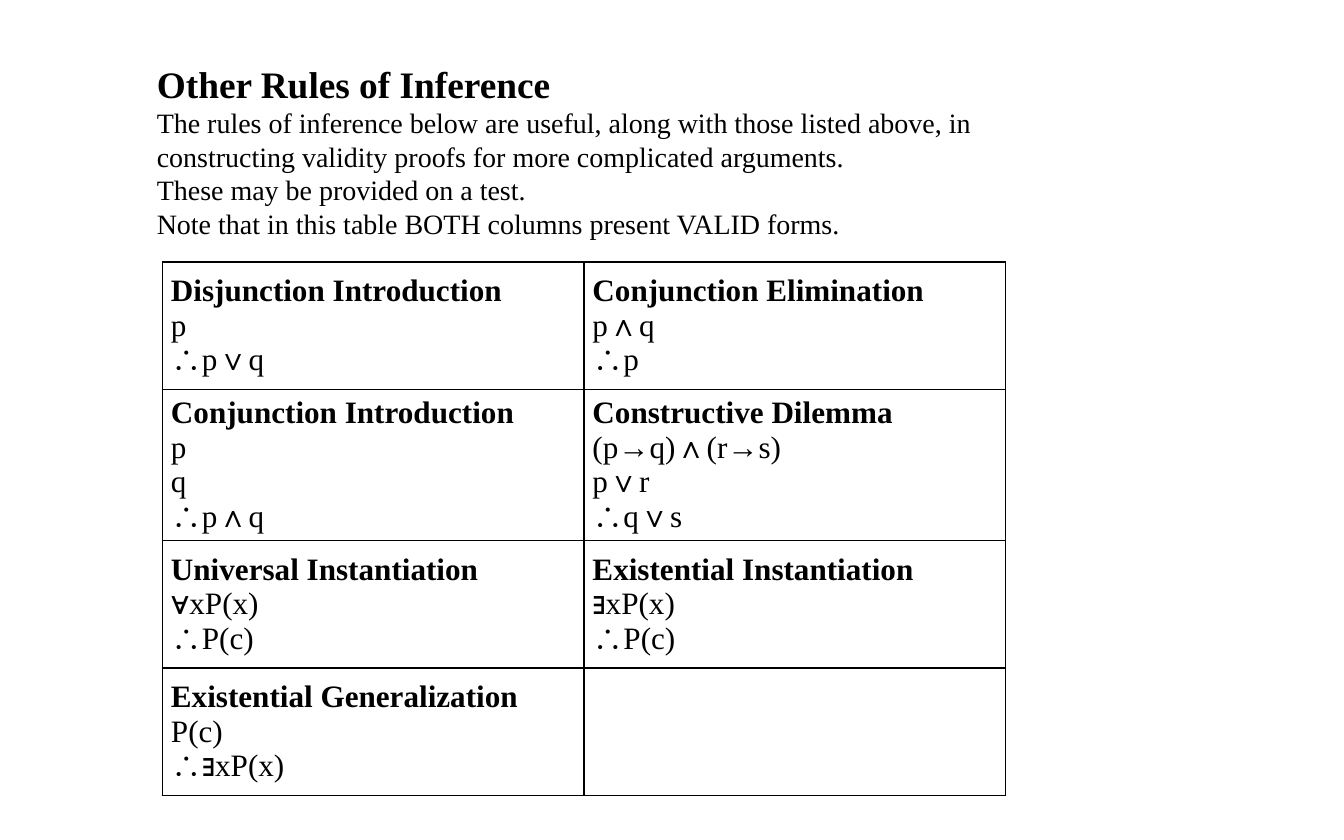
"""Build a slide listing further valid rules of inference."""
from lxml.etree import SubElement
from pptx import Presentation
from pptx.dml.color import RGBColor
from pptx.enum.text import MSO_ANCHOR as Anchor, MSO_AUTO_SIZE as AutoSize, PP_ALIGN as Align
from pptx.oxml.ns import qn
from pptx.util import Pt

BLACK = RGBColor(0, 0, 0)
WHITE = RGBColor(255, 255, 255)

INTRO = [
    "The rules of inference below are useful, along with those listed above, in "
    "constructing validity proofs for more complicated arguments.",
    "These may be provided on a test.",
    "Note that in this table BOTH columns present VALID forms.",
]
RULES = [
    [("Disjunction Introduction", "p", "∴p∨q"),
     ("Conjunction Elimination", "p∧q", "∴p")],
    [("Conjunction Introduction", "p", "q", "∴p∧q"),
     ("Constructive Dilemma", "(p→q)∧(r→s)", "p∨r", "∴q∨s")],
    [("Universal Instantiation", "∀xP(x)", "∴P(c)"),
     ("Existential Instantiation", "∃xP(x)", "∴P(c)")],
    [("Existential Generalization", "P(c)", "∴∃xP(x)"),
     ()],
]
ROW_HEIGHTS = [82, 97, 82, 82]


def apply(target, values):
    """Set each named attribute of the target."""
    for name, value in values.items():
        setattr(target, name, value)


class SlideWriter:
    """Hold the text style and the current slide."""

    font_name = "Times New Roman"

    def __init__(self, deck):
        """Start a title-only slide."""
        self.page = deck.slides.add_slide(deck.slide_layouts[5])

    def lines(self, para, texts, size, bold_lines=0):
        """Write lines split by breaks, the leading ones in bold."""
        para.alignment = Align.LEFT
        for index, text in enumerate(texts):
            if index:
                para.add_line_break()
            span = para.add_run()
            span.text = text
            apply(span.font, {"name": self.font_name, "size": Pt(size),
                              "bold": index < bold_lines})
            span.font.color.rgb = BLACK
        for line_break in para._p.findall(qn("a:br")):
            SubElement(line_break, qn("a:rPr"), sz=str(size * 100))

    def title(self, heading, intro, left, top, width, height):
        """Place the heading and its introduction in the title placeholder."""
        box = self.page.shapes.title
        apply(box, {"left": Pt(left), "top": Pt(top),
                    "width": Pt(width), "height": Pt(height)})
        frame = box.text_frame
        apply(frame, {"word_wrap": True, "auto_size": AutoSize.NONE,
                      "vertical_anchor": Anchor.TOP})
        self.lines(frame.paragraphs[0], [heading], 24, bold_lines=1)
        self.lines(frame.add_paragraph(), intro, 18)

    def border(self, cell):
        """Draw a thin black line on all four sides of a cell."""
        properties = cell._tc.get_or_add_tcPr()
        for position, side in enumerate(("lnL", "lnR", "lnT", "lnB")):
            line = SubElement(properties, qn(f"a:{side}"), w=str(Pt(1)))
            fill = SubElement(line, qn("a:solidFill"))
            SubElement(fill, qn("a:srgbClr"), val=str(BLACK))
            properties.insert(position, line)

    def table(self, rows, heights, left, top, width):
        """Place a ruled table whose cells open with a bold line."""
        columns = len(rows[0])
        table = self.page.shapes.add_table(
            len(rows), columns, Pt(left), Pt(top), Pt(width), Pt(sum(heights))).table
        apply(table, {"first_row": False, "horz_banding": False})
        for row, height in zip(table.rows, heights):
            row.height = Pt(height)
        for cell, texts in zip(table.iter_cells(), sum(rows, [])):
            apply(cell, {"margin_left": Pt(5.5), "margin_right": Pt(5.5),
                         "margin_top": Pt(2.75), "margin_bottom": Pt(2.75),
                         "vertical_anchor": Anchor.MIDDLE})
            cell.fill.solid()
            cell.fill.fore_color.rgb = WHITE
            self.border(cell)
            self.lines(cell.text_frame.paragraphs[0], texts, 20, bold_lines=1)


def main():
    """Build and save the deck."""
    deck = Presentation()
    apply(deck, {"slide_width": Pt(864), "slide_height": Pt(540)})
    writer = SlideWriter(deck)
    writer.title("Other Rules of Inference", INTRO, 93.6, 35.5, 605, 124)
    writer.table(RULES, ROW_HEIGHTS, 104.4, 168.5, 542)
    deck.save("out.pptx")


if __name__ == "__main__":
    main()
